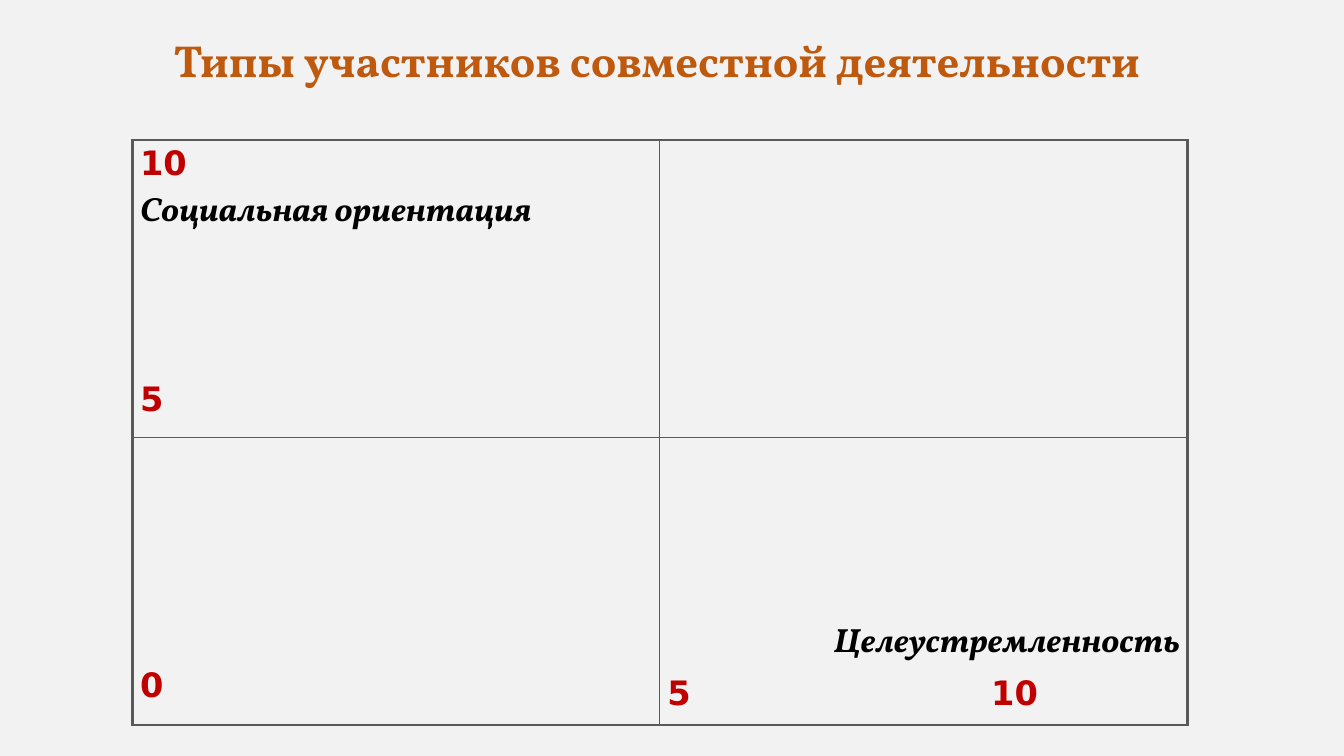
"""Build a slide with a two-by-two grid of participant types."""
import dataclasses

import lxml.etree
import pptx
import pptx.dml.color
import pptx.enum.text
import pptx.oxml.ns
import pptx.util

Cm, Pt = pptx.util.Cm, pptx.util.Pt
ALIGN = pptx.enum.text.PP_ALIGN
ANCHOR = pptx.enum.text.MSO_ANCHOR

TITLE = "Типы участников совместной деятельности"
CELLS = {
    (0, 0): {
        "anchor": ANCHOR.TOP,
        "bottom": 0.1,
        "lines": [
            ("10", "score", ALIGN.LEFT, 0),
            ("Социальная ориентация", "axis", ALIGN.LEFT, 4.8),
            ("5", "score", ALIGN.LEFT, 102.8),
        ],
    },
    (1, 0): {
        "anchor": ANCHOR.BOTTOM,
        "bottom": 0.5,
        "lines": [("0", "score", ALIGN.LEFT, 0)],
    },
    (1, 1): {
        "anchor": ANCHOR.BOTTOM,
        "bottom": 0.3,
        "lines": [
            ("Целеустремленность", "axis", ALIGN.RIGHT, 0),
            ("5\t10", "score", ALIGN.LEFT, 4.8),
        ],
    },
}
COLUMN_WIDTHS = [13.29, 13.29]
ROW_HEIGHTS = [7.5, 7.24]
TABLE_LEFT, TABLE_TOP = 3.34, 3.53
SCORE_TAB = 8.16


@dataclasses.dataclass(frozen=True)
class TextStyle:
    """Describe the look of a run."""

    font: str
    size: float
    color: str
    italic: bool = False


@dataclasses.dataclass(frozen=True)
class Theme:
    """Hold the colours, text styles and line widths."""

    background: str = "F2F2F2"
    border: str = "595959"
    outer_width: float = 2.25
    inner_width: float = 1
    title: TextStyle = TextStyle("Vollkorn", 32, "BE590E")
    score: TextStyle = TextStyle("DejaVu Sans", 24, "C00000")
    axis: TextStyle = TextStyle("Vollkorn", 24, "000000", True)


THEME = Theme()


def rgb(value):
    """Convert a hex string to a colour."""
    return pptx.dml.color.RGBColor.from_string(value)


def format_runs(para, style):
    """Apply a text style to every run of a paragraph."""
    for span in para.runs:
        span.font.name = style.font
        span.font.size = Pt(style.size)
        span.font.color.rgb = rgb(style.color)
        span.font.bold = True
        span.font.italic = style.italic


def add_child(parent, tag, **attributes):
    """Append a DrawingML element."""
    return lxml.etree.SubElement(parent, pptx.oxml.ns.qn(tag), **attributes)


def set_borders(cell, row, column):
    """Draw heavy lines on the outside of the grid and light ones inside."""
    outer_sides = {
        "L": column == 0,
        "R": column == len(COLUMN_WIDTHS) - 1,
        "T": row == 0,
        "B": row == len(ROW_HEIGHTS) - 1,
    }
    properties = cell._tc.get_or_add_tcPr()
    for side, is_outer in outer_sides.items():
        width = THEME.outer_width if is_outer else THEME.inner_width
        line = add_child(properties, f"a:ln{side}", w=str(int(Pt(width))))
        fill = add_child(line, "a:solidFill")
        add_child(fill, "a:srgbClr", val=THEME.border)


def fill_cell(cell, anchor, bottom, lines):
    """Write the lines of one quadrant."""
    cell.vertical_anchor = anchor
    cell.margin_left = cell.margin_right = Cm(0.19)
    cell.margin_top, cell.margin_bottom = Cm(0.1), Cm(bottom)
    frame = cell.text_frame
    frame.text = "\n".join(line[0] for line in lines)
    for para, (text, style, alignment, space) in zip(frame.paragraphs, lines):
        para.alignment = alignment
        para.space_before = Pt(space)
        format_runs(para, getattr(THEME, style))
        if "\t" in text:
            tabs = add_child(para._p.get_or_add_pPr(), "a:tabLst")
            add_child(tabs, "a:tab", pos=str(int(Cm(SCORE_TAB))), algn="l")


def add_title(page):
    """Place and format the title."""
    title = page.shapes.title
    title.left, title.top = Cm(0.84), Cm(0.53)
    title.width, title.height = Cm(31.45), Cm(1.8)
    frame = title.text_frame
    frame.text = TITLE
    frame.word_wrap = True
    frame.vertical_anchor = ANCHOR.BOTTOM
    para = frame.paragraphs[0]
    para.alignment = ALIGN.CENTER
    para.line_spacing = 0.9
    format_runs(para, THEME.title)


def add_grid(page):
    """Add the table of quadrants."""
    table = page.shapes.add_table(
        len(ROW_HEIGHTS), len(COLUMN_WIDTHS),
        Cm(TABLE_LEFT), Cm(TABLE_TOP),
        Cm(sum(COLUMN_WIDTHS)), Cm(sum(ROW_HEIGHTS)),
    ).table
    table.first_row = table.horz_banding = False
    for column, width in zip(table.columns, COLUMN_WIDTHS):
        column.width = Cm(width)
    for row, height in zip(table.rows, ROW_HEIGHTS):
        row.height = Cm(height)
    for row in range(len(ROW_HEIGHTS)):
        for column in range(len(COLUMN_WIDTHS)):
            cell = table.cell(row, column)
            set_borders(cell, row, column)
            cell.fill.background()
            if (row, column) in CELLS:
                fill_cell(cell, **CELLS[row, column])


def main():
    """Assemble and save the deck."""
    deck = pptx.Presentation()
    deck.slide_width, deck.slide_height = Cm(33.87), Cm(19.05)
    page = deck.slides.add_slide(deck.slide_layouts.get_by_name("Title Only"))
    page.background.fill.solid()
    page.background.fill.fore_color.rgb = rgb(THEME.background)
    add_title(page)
    add_grid(page)
    deck.save("out.pptx")


if __name__ == "__main__":
    main()
